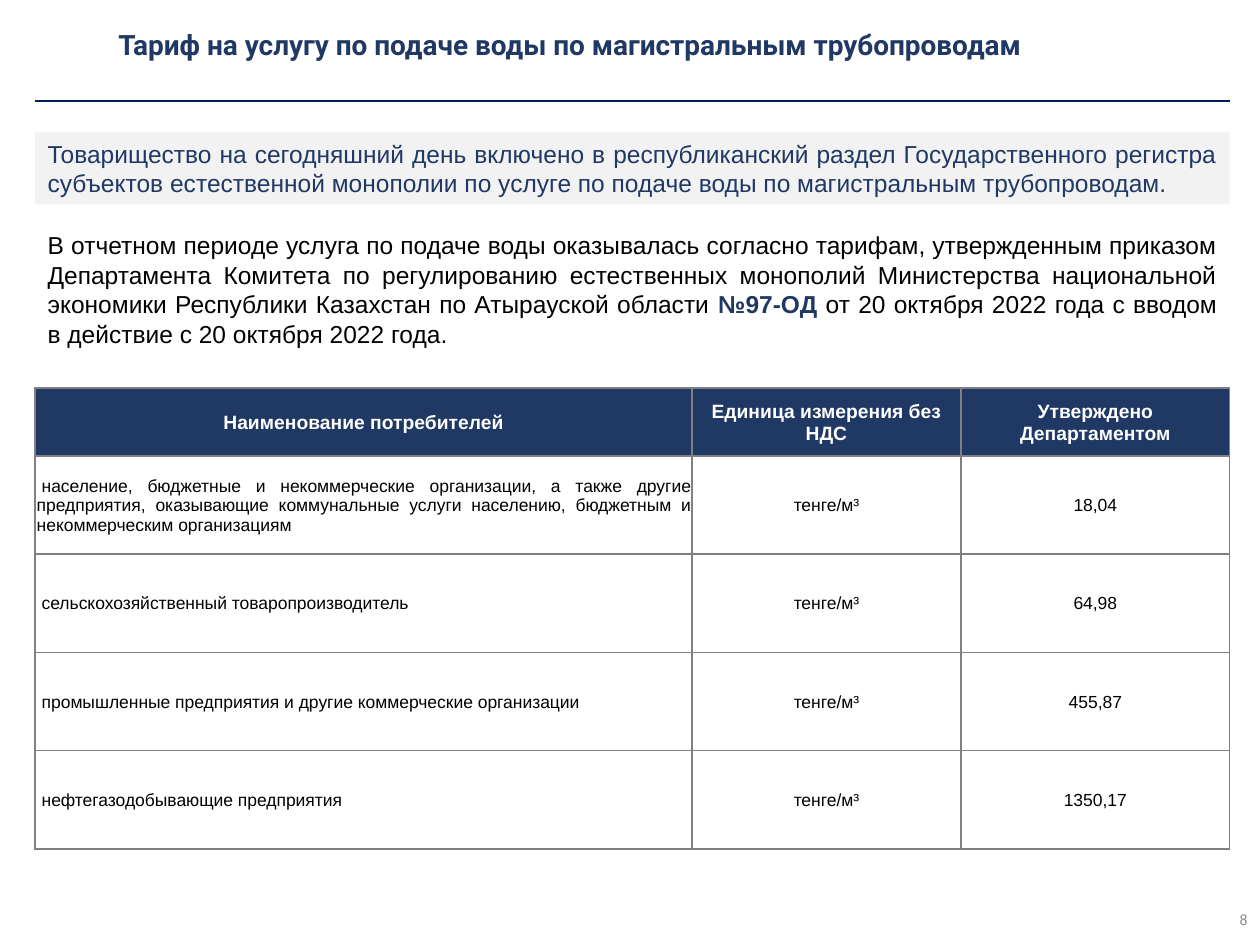
from dataclasses import dataclass

from lxml import etree
from pptx import Presentation
from pptx.dml.color import RGBColor
from pptx.enum import shapes, text
from pptx.oxml import ns
from pptx.util import Cm, Pt

COLORS = {"navy": "203864", "rule": "002060", "panel": "F2F2F2", "grid": "808080",
          "black": "000000", "white": "FFFFFF", "number": "8C8C8C"}
LEFT, WIDTH = 0.71, 24.08
COLUMN_WIDTHS = (13.24, 5.42, 5.42)
HEADER_HEIGHT, ROW_HEIGHT = 1.37, 1.98
HEADERS = ("Наименование потребителей", "Единица измерения без НДС",
           "Утверждено Департаментом")
UNIT = "тенге/м³"
ALIGN = text.PP_ALIGN


@dataclass
class Style:
    size: float
    color: str = "black"
    bold: bool = False
    font: str = "Arial"


@dataclass
class Tariff:
    consumer: str
    price: str


TARIFFS = (
    Tariff("население, бюджетные и некоммерческие организации, а также другие "
           "предприятия, оказывающие коммунальные услуги населению, бюджетным и "
           "некоммерческим организациям", "18,04"),
    Tariff("сельскохозяйственный товаропроизводитель", "64,98"),
    Tariff("промышленные предприятия и другие коммерческие организации", "455,87"),
    Tariff("нефтегазодобывающие предприятия", "1350,17"),
)


def rgb(name: str) -> RGBColor:
    return RGBColor.from_string(COLORS[name])


def write(tf, align, *runs: tuple[str, Style]) -> None:
    p = tf.paragraphs[0]
    p.alignment = align
    for words, style in runs:
        r = p.add_run()
        r.text = words
        r.font.name, r.font.size, r.font.bold = style.font, Pt(style.size), style.bold
        r.font.color.rgb = rgb(style.color)


def add_text(s, left: float, top: float, width: float, height: float, align,
             *runs: tuple[str, Style], anchor=text.MSO_ANCHOR.TOP):
    sp = s.shapes.add_textbox(Cm(left), Cm(top), Cm(width), Cm(height))
    sp.text_frame.word_wrap = True
    sp.text_frame.vertical_anchor = anchor
    write(sp.text_frame, align, *runs)
    return sp


def add_borders(cell) -> None:
    tc_pr = cell._tc.get_or_add_tcPr()
    for side in ("lnL", "lnR", "lnT", "lnB"):
        ln = etree.SubElement(tc_pr, ns.qn(f"a:{side}"), w=str(Pt(1)))
        fill = etree.SubElement(ln, ns.qn("a:solidFill"))
        etree.SubElement(fill, ns.qn("a:srgbClr"), val=COLORS["grid"])


def fill_cell(cell, words: str, align, style: Style, fill: str | None = None) -> None:
    cell.margin_left = cell.margin_right = cell.margin_top = Cm(0.03)
    cell.margin_bottom = 0
    cell.vertical_anchor = text.MSO_ANCHOR.MIDDLE
    add_borders(cell)
    if fill:
        cell.fill.solid()
        cell.fill.fore_color.rgb = rgb(fill)
    else:
        cell.fill.background()
    write(cell.text_frame, align, (words, style))


def add_tariff_table(s) -> None:
    height = HEADER_HEIGHT + ROW_HEIGHT * len(TARIFFS)
    table = s.shapes.add_table(len(TARIFFS) + 1, len(HEADERS), Cm(LEFT), Cm(7.82),
                               Cm(WIDTH), Cm(height)).table
    table.horz_banding = False
    for column, width in zip(table.columns, COLUMN_WIDTHS):
        column.width = Cm(width)
    for i, row in enumerate(table.rows):
        row.height = Cm(ROW_HEIGHT if i else HEADER_HEIGHT)
    for col, header in enumerate(HEADERS):
        fill_cell(table.cell(0, col), header, ALIGN.CENTER,
                  Style(11, "white", True), "navy")
    for row, tariff in enumerate(TARIFFS, 1):
        name = table.cell(row, 0)
        fill_cell(name, tariff.consumer, ALIGN.JUSTIFY, Style(10))
        p_pr = name.text_frame.paragraphs[0]._p.get_or_add_pPr()
        p_pr.set("indent", str(Cm(0.1)))  # first-line indent
        for col, words in enumerate((UNIT, tariff.price), 1):
            fill_cell(table.cell(row, col), words, ALIGN.CENTER, Style(10))


def main() -> None:
    prs = Presentation()
    prs.slide_width, prs.slide_height = Cm(25.4), Cm(19.05)
    s = prs.slides.add_slide(prs.slide_layouts[5])

    # Title
    title = s.shapes.title
    title.left, title.top, title.width, title.height = Cm(2.13), Cm(0.36), Cm(22.68), Cm(1.07)
    title.text_frame.auto_size = text.MSO_AUTO_SIZE.NONE
    title.text_frame.vertical_anchor = text.MSO_ANCHOR.MIDDLE
    write(title.text_frame, ALIGN.LEFT,
          ("Тариф на услугу по подаче воды по магистральным трубопроводам",
           Style(16, "navy", True, "Roboto")))

    # Rule under the title
    rule = s.shapes.add_connector(shapes.MSO_CONNECTOR.STRAIGHT, Cm(LEFT), Cm(2.03),
                                  Cm(LEFT + WIDTH), Cm(2.03))
    rule.line.color.rgb, rule.line.width = rgb("rule"), Pt(1)
    etree.SubElement(rule._element.spPr, ns.qn("a:effectLst"))

    # Shaded statement
    panel = add_text(
        s, LEFT, 2.67, WIDTH, 1.45, ALIGN.JUSTIFY,
        ("Товарищество на сегодняшний день включено в республиканский раздел "
         "Государственного регистра субъектов естественной монополии по услуге по "
         "подаче воды по магистральным трубопроводам.", Style(14, "navy")))
    panel.fill.solid()
    panel.fill.fore_color.rgb = rgb("panel")

    # Approval of the tariffs
    add_text(
        s, LEFT, 4.52, WIDTH, 2.64, ALIGN.JUSTIFY,
        ("В отчетном периоде услуга по подаче воды оказывалась согласно тарифам, "
         "утвержденным приказом Департамента Комитета по регулированию естественных "
         "монополий Министерства национальной экономики Республики Казахстан по "
         "Атырауской области ", Style(14)),
        ("№97-ОД ", Style(14, "navy", True)),
        ("от 20 октября 2022 года с вводом в действие с 20 октября 2022 года.",
         Style(14)))

    add_tariff_table(s)

    # Slide number
    add_text(s, 19.69, 18.03, 5.71, 1.02, ALIGN.RIGHT,
             ("8", Style(9, "number", font="Calibri")), anchor=text.MSO_ANCHOR.MIDDLE)

    prs.save("out.pptx")


if __name__ == "__main__":
    main()
